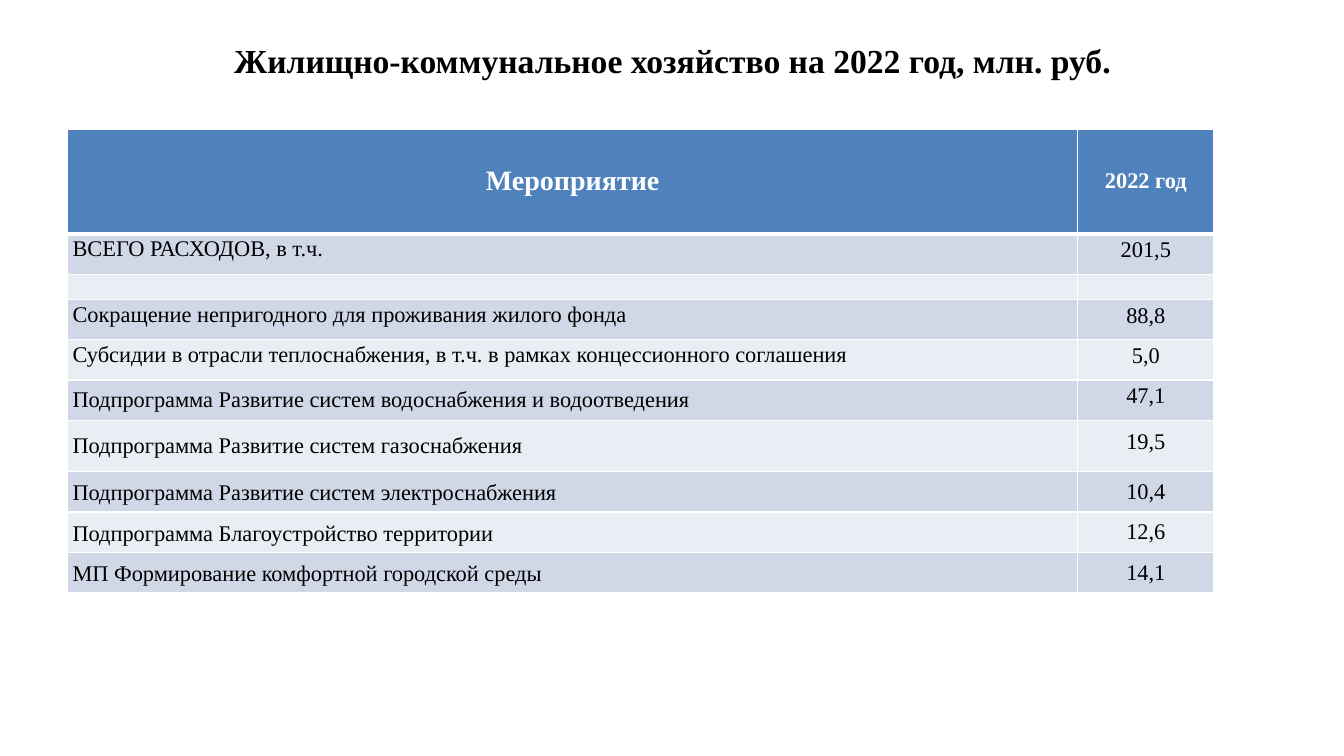
from lxml import etree
from pptx import Presentation
from pptx import util as u
from pptx.dml.color import RGBColor
from pptx.enum import text
from pptx.oxml.ns import qn

BLACK = RGBColor(0x00, 0x00, 0x00)
WHITE = RGBColor(0xFF, 0xFF, 0xFF)
HEADER_BLUE = RGBColor(0x4F, 0x81, 0xBD)
BAND_DARK = RGBColor(0xD0, 0xD8, 0xE8)
BAND_LIGHT = RGBColor(0xE9, 0xED, 0xF4)

MIDDLE, TOP = text.MSO_ANCHOR.MIDDLE, text.MSO_ANCHOR.TOP
LEFT, CENTER = text.PP_ALIGN.LEFT, text.PP_ALIGN.CENTER

COLUMN_WIDTHS = (10.02, 1.35)
HEADER_HEIGHT = 1.04
HEADINGS = (("Мероприятие", 20), ("2022 год", 16))
# Name, amount, row height, name line spacing (pt), amount line spacing (pt), top inset of name
EXPENSES = (
    ("ВСЕГО РАСХОДОВ, в т.ч.", "201,5", 0.4, 11, 12, 0),
    ("", "", 0.25, None, None, 0),
    ("Сокращение непригодного для проживания жилого фонда", "88,8", 0.4, 11, 12, 0),
    ("Субсидии в отрасли теплоснабжения, в т.ч. в рамках концессионного соглашения",
     "5,0", 0.4, 11, 12, 0),
    ("Подпрограмма Развитие систем водоснабжения и водоотведения", "47,1", 0.4, None, 12, 0),
    ("Подпрограмма Развитие систем газоснабжения", "19,5", 0.51, None, 12, 0),
    ("Подпрограмма Развитие систем электроснабжения", "10,4", 0.4, 12, None, 0.17),
    ("Подпрограмма Благоустройство территории", "12,6", 0.4, 12, None, 0.17),
    ("МП Формирование комфортной городской среды", "14,1", 0.4, 12, None, 0.17),
)


class BudgetSlide:
    font = "Times New Roman"

    def __init__(self, deck):
        self.slide = deck.slides.add_slide(deck.slide_layouts[6])

    def add_words(self, paragraph, words, size, color=BLACK, bold=False, align=LEFT,
                  spacing=None):
        paragraph.alignment = align
        if spacing:
            paragraph.line_spacing = u.Pt(spacing)
        if not words:
            etree.SubElement(paragraph._p, qn("a:endParaRPr"), sz="1000")
            return
        run = paragraph.add_run()
        run.text = words
        run.font.name, run.font.size, run.font.bold = self.font, u.Pt(size), bold
        run.font.color.rgb = color

    def title(self, words, left, top, width, height):
        box = self.slide.shapes.add_textbox(*map(u.Inches, (left, top, width, height)))
        frame = box.text_frame
        frame.word_wrap = True
        frame.vertical_anchor = MIDDLE
        self.add_words(frame.paragraphs[0], words, 24, bold=True, align=CENTER)

    def table(self, left, top, widths, heights):
        frame = self.slide.shapes.add_table(
            len(heights), len(widths),
            *map(u.Inches, (left, top, sum(widths), sum(heights))))
        grid = frame.table
        for column, width in zip(grid.columns, widths):
            column.width = u.Inches(width)
        for row, height in zip(grid.rows, heights):
            row.height = u.Inches(height)
        return grid

    def cell(self, cell, words, fill, size=16, anchor=MIDDLE, insets=(0.05, 0, 0),
             top_line=1, bottom_line=1, **style):
        """Style one table cell; insets are (side, top, bottom)."""
        side, top, bottom = map(u.Inches, insets)
        cell.margin_left = cell.margin_right = side
        cell.margin_top, cell.margin_bottom = top, bottom
        cell.vertical_anchor = anchor
        self.borders(cell, top_line, bottom_line)
        cell.fill.solid()
        cell.fill.fore_color.rgb = fill
        self.add_words(cell.text_frame.paragraphs[0], words, size, **style)

    def borders(self, cell, top_line, bottom_line):
        properties = cell._tc.get_or_add_tcPr()
        for edge, points in (("L", 1), ("R", 1), ("T", top_line), ("B", bottom_line)):
            line = etree.SubElement(properties, qn(f"a:ln{edge}"), w=str(u.Pt(points)))
            paint = etree.SubElement(line, qn("a:solidFill"))
            etree.SubElement(paint, qn("a:srgbClr"), val=str(WHITE))


def main():
    deck = Presentation()
    deck.slide_width, deck.slide_height = u.Inches(13.33), u.Inches(7.5)
    page = BudgetSlide(deck)
    page.title("Жилищно-коммунальное хозяйство на 2022 год, млн. руб.", 0.67, 0.3, 12, 0.6)

    heights = [HEADER_HEIGHT] + [expense[2] for expense in EXPENSES]
    budget = page.table(0.67, 1.28, COLUMN_WIDTHS, heights)
    roomy = (0.1, 0.05, 0.05)
    for column, (heading, size) in enumerate(HEADINGS):
        page.cell(budget.cell(0, column), heading, HEADER_BLUE, size, insets=roomy,
                  bottom_line=3, color=WHITE, bold=True, align=CENTER)

    for row, (name, amount, _, name_spacing, amount_spacing, name_top) in enumerate(EXPENSES, 1):
        band = BAND_DARK if row % 2 else BAND_LIGHT
        top_line = 3 if row == 1 else 1
        page.cell(budget.cell(row, 0), name, band, anchor=TOP if name_top else MIDDLE,
                  insets=(0.05, name_top, 0), top_line=top_line, spacing=name_spacing)
        page.cell(budget.cell(row, 1), amount, band,
                  insets=roomy if name_top else (0.05, 0, 0),
                  top_line=top_line, align=CENTER, spacing=amount_spacing)

    deck.save("out.pptx")


if __name__ == "__main__":
    main()
